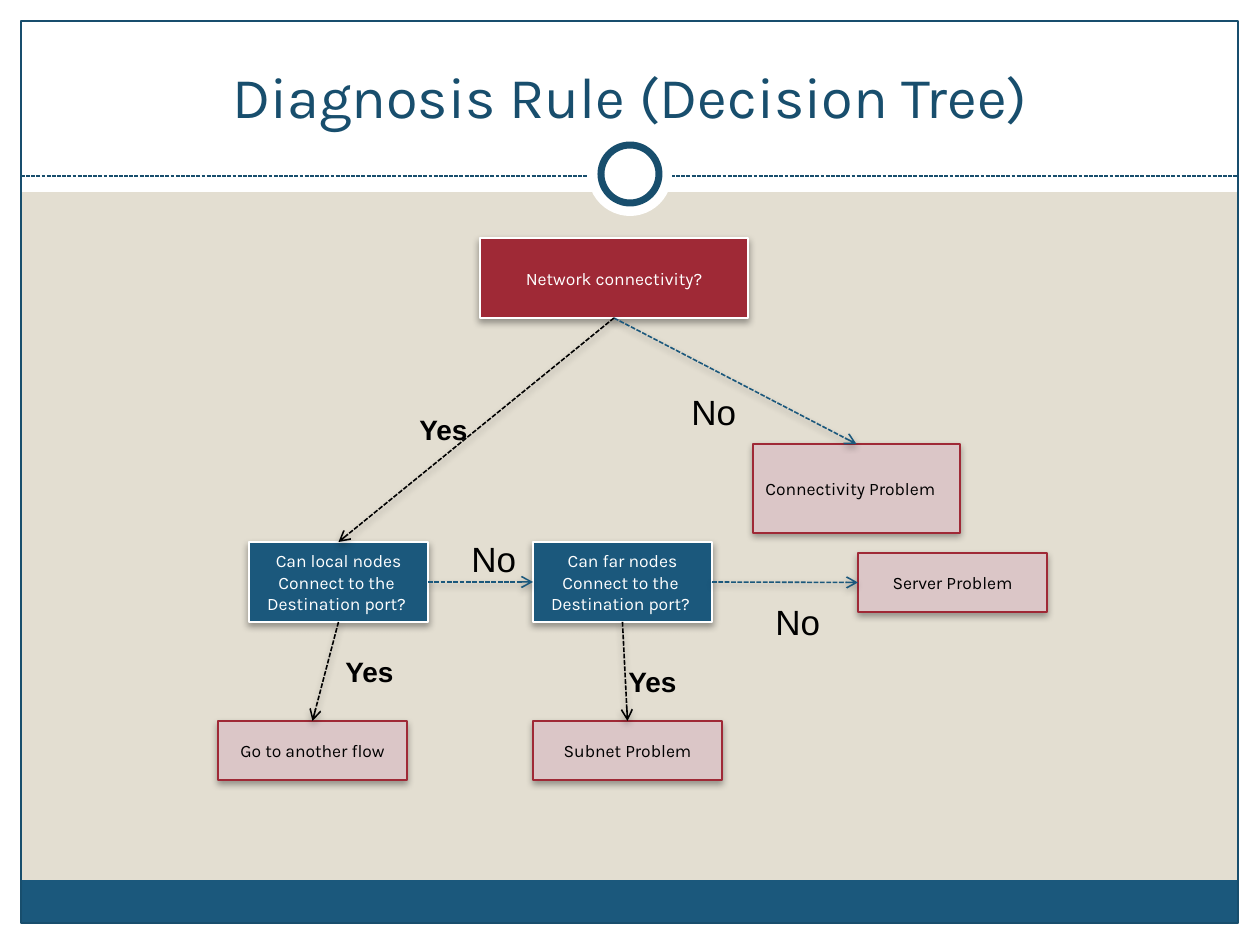
from pptx import Presentation
from pptx.util import Pt
from pptx.dml.color import RGBColor
from pptx.enum.dml import MSO_LINE
from pptx.enum.shapes import MSO_CONNECTOR, MSO_SHAPE
from pptx.enum.text import MSO_ANCHOR, PP_ALIGN
from pptx.oxml.ns import qn
from lxml.etree import SubElement

SCALE = 914400 / 126
WHITE, BLACK, SAND = "FFFFFF", "000000", "E3DED1"
NAVY, BLUE, RED, PINK = "184E6D", "1B587C", "9F2936", "DBC6C7"

TITLE = "Diagnosis Rule (Decision Tree)"
BANDS = [
    (0, 924, 1260, 21, WHITE),
    (0, 0, 1260, 192, WHITE),
    (0, 0, 21, 945, WHITE),
    (1239, 0, 21, 945, WHITE),
    (21, 880, 1217, 43, BLUE),
]
STYLES = {
    "root": (RED, WHITE, 1.57, WHITE),
    "ask": (BLUE, WHITE, 1.57, WHITE),
    "end": (PINK, RED, 0.75, BLACK),
}
ASK = "Can {} nodes\nConnect to the \nDestination port? "
NODES = {
    "net": ("root", "Network connectivity?", 480, 238, 268, 80),
    "local": ("ask", ASK.format("local"), 249, 542, 179, 80),
    "far": ("ask", ASK.format("far"), 533, 542, 179, 80),
    "link": ("end", "Connectivity Problem", 753, 444, 207, 89),
    "server": ("end", "Server Problem", 858, 553, 189, 59),
    "subnet": ("end", "Subnet Problem", 533, 721, 189, 59),
    "flow": ("end", "Go to another flow", 218, 721, 189, 59),
}
TOP, LEFT, BOTTOM, RIGHT = range(4)
EDGES = [
    ("local", RIGHT, "far", LEFT, BLUE),
    ("far", RIGHT, "server", LEFT, BLUE),
    ("net", BOTTOM, "link", TOP, BLUE),
    ("net", BOTTOM, "local", TOP, BLACK),
    ("local", BOTTOM, "flow", TOP, BLACK),
    ("far", BOTTOM, "subnet", TOP, BLACK),
]
LABELS = {
    "No": [(679, 384), (459, 531), (763, 594)],
    "Yes": [(407, 406), (616, 658), (333, 648)],
}
LOOKS = {"No": (71, 55, 20, False), "Yes": (100, 47, 16, True)}


def px(*nums):
    return [round(n * SCALE) for n in nums]


def color(code):
    return RGBColor.from_string(code)


def write(shape, text, size, ink, font="Karla", bold=False,
          align=PP_ALIGN.CENTER, anchor=MSO_ANCHOR.MIDDLE, wrap=False):
    frame = shape.text_frame
    frame.word_wrap = wrap
    frame.vertical_anchor = anchor
    frame.text = text
    for para in frame.paragraphs:
        para.alignment = align
        for run in para.runs:
            run.font.name = font
            run.font.size = Pt(size)
            run.font.bold = bold
            run.font.color.rgb = color(ink)


def draw(slide, kind, box, fill=None, line=None, width=0.75):
    shape = slide.shapes.add_shape(kind, *px(*box))
    shape.shadow.inherit = False
    if fill:
        shape.fill.solid()
        shape.fill.fore_color.rgb = color(fill)
    else:
        shape.fill.background()
    if line:
        shape.line.color.rgb = color(line)
        shape.line.width = Pt(width)
    else:
        shape.line.fill.background()
    return shape


def effects(shape):
    props = shape._element.spPr
    found = props.find(qn("a:effectLst"))
    return SubElement(props, qn("a:effectLst")) if found is None else found


def shade(shape):
    outer = SubElement(effects(shape), qn("a:outerShdw"), blurRad=str(Pt(4)),
                       dist=str(Pt(2)), dir="5400000", rotWithShape="0")
    ink = SubElement(outer, qn("a:srgbClr"), val=BLACK)
    SubElement(ink, qn("a:alpha"), val="35000")


def dash(slide, ends, ink, width):
    line = slide.shapes.add_connector(MSO_CONNECTOR.STRAIGHT, *px(*ends))
    line.line.color.rgb = color(ink)
    line.line.width = Pt(width)
    line.line.dash_style = MSO_LINE.SQUARE_DOT
    effects(line)
    return line


def frame(slide):
    for *box, fill in BANDS:
        draw(slide, MSO_SHAPE.RECTANGLE, box, fill)
    draw(slide, MSO_SHAPE.RECTANGLE, (21, 21, 1217, 902), line=NAVY)
    dash(slide, (21, 176, 1239, 176), NAVY, 0.75)
    draw(slide, MSO_SHAPE.OVAL, (588, 132, 84, 84), WHITE)
    draw(slide, MSO_SHAPE.OVAL, (601, 145, 58, 58), WHITE, NAVY, 4)
    title = slide.shapes.add_textbox(*px(42, 31, 1176, 105))
    write(title, TITLE, 33, NAVY, anchor=MSO_ANCHOR.BOTTOM, wrap=True)


def tree(slide):
    made = {}
    for name, (style, text, *box) in NODES.items():
        fill, line, width, ink = STYLES[style]
        node = draw(slide, MSO_SHAPE.RECTANGLE, box, fill, line, width)
        shade(node)
        align = PP_ALIGN.LEFT if name == "link" else PP_ALIGN.CENTER
        write(node, text, 10, ink, align=align)
        made[name] = node
    for start, out, end, into, ink in EDGES:
        line = dash(slide, (0, 0, 0, 0), ink, 0.9)
        line.begin_connect(made[start], out)
        line.end_connect(made[end], into)
        SubElement(line.line._get_or_add_ln(), qn("a:tailEnd"), type="arrow")
        shade(line)
    for word, spots in LABELS.items():
        wide, high, size, bold = LOOKS[word]
        for left, top in spots:
            label = slide.shapes.add_textbox(*px(left, top, wide, high))
            write(label, word, size, BLACK, font="Arial", bold=bold,
                  align=PP_ALIGN.LEFT, anchor=MSO_ANCHOR.TOP, wrap=bold)


def main():
    deck = Presentation()
    deck.slide_width, deck.slide_height = px(1260, 945)
    slide = deck.slides.add_slide(deck.slide_layouts[6])
    slide.background.fill.solid()
    slide.background.fill.fore_color.rgb = color(SAND)
    frame(slide)
    tree(slide)
    deck.save("out.pptx")


if __name__ == "__main__":
    main()
